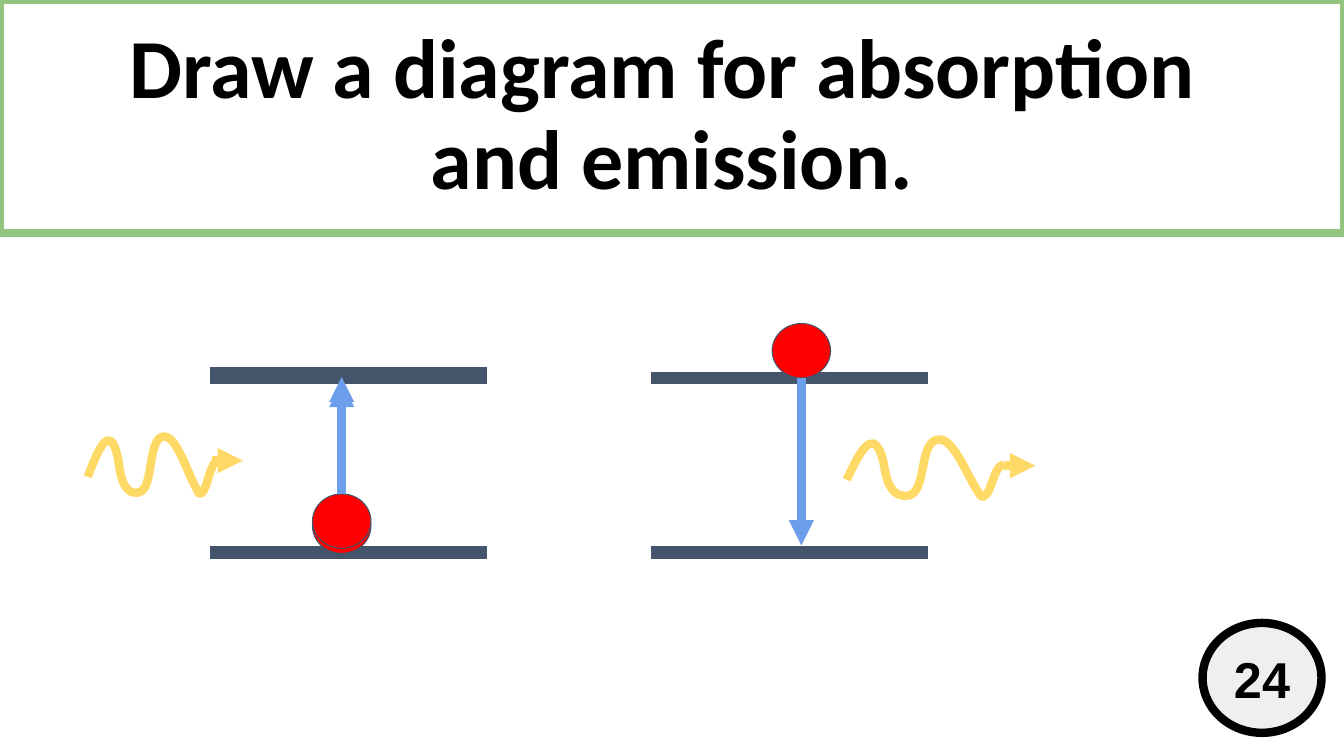
import pptx
import pptx.util
import pptx.dml.color
import pptx.enum.shapes
import pptx.enum.text
import pptx.oxml.ns
import lxml.etree

UNIT = pptx.util.Inches(0.1)
WIDE, HIGH = 133.33, 75
SHAPE = pptx.enum.shapes.MSO_SHAPE
SLATE, RED, BLUE, GOLD = "44546A", "FF0000", "6D9EEB", "FFD966"
TITLE = {"name": "Calibri", "size": pptx.util.Pt(60), "bold": True}
BADGE = {"name": "Arial", "size": pptx.util.Pt(36), "bold": True}
SPAN, RISE = 12.9, 5.7
START = (0, 4)
CURVES = [
    ((0.6, 2.5), (1.7, -0.6), (2.5, 0.7)),
    ((3.2, 1.8), (3, 3.8), (3.7, 4.9)),
    ((4.1, 5.6), (4.9, 5.8), (5.4, 5.4)),
    ((6.4, 4.5), (6.1, 1.1), (7.1, 0.2)),
    ((8.6, -1), (9.8, 3.6), (11, 5.6)),
    ((11.1, 5.8), (11.4, 5.6), (11.5, 5.4)),
    ((12, 4.5), (12.2, 2.5), (12.9, 2.5)),
]


def grid(*cells):
    return [round(cell * UNIT) for cell in cells]


def paint(part, color):
    part.solid()
    part.fore_color.rgb = pptx.dml.color.RGBColor.from_string(color)


def stroke(item, color, width):
    paint(item.line.fill, color)
    item.line.width = pptx.util.Pt(width)


def add_tag(home, name, **marks):
    return lxml.etree.SubElement(home, pptx.oxml.ns.qn(name), **marks)


def add_form(slide, kind, box, fill, color, width):
    form = slide.shapes.add_shape(kind, *grid(*box))
    form.shadow.inherit = False
    if fill:
        paint(form.fill, fill)
    else:
        form.fill.background()
    stroke(form, color, width)
    return form


def add_text(form, lines, style, inset, space):
    frame = form.text_frame
    frame.word_wrap = True
    frame.vertical_anchor = pptx.enum.text.MSO_ANCHOR.MIDDLE
    frame.margin_left = frame.margin_right = UNIT
    frame.margin_top = frame.margin_bottom = round(inset * UNIT)
    for place, line in enumerate(lines):
        para = frame.add_paragraph() if place else frame.paragraphs[0]
        para.alignment = pptx.enum.text.PP_ALIGN.CENTER
        para.line_spacing = space
        run = para.add_run()
        run.text = line
        for key, value in style.items():
            setattr(run.font, key, value)
        paint(run.font.fill, "000000")


def add_line(slide, ends, color, width, arrow=False):
    kind = pptx.enum.shapes.MSO_CONNECTOR.STRAIGHT
    line = slide.shapes.add_connector(kind, *grid(*ends))
    stroke(line, color, width)
    if arrow:
        add_tag(line.line._ln, "a:tailEnd", type="triangle")
    add_tag(line._element.spPr, "a:effectLst")


def add_bar(slide, left, top):
    add_line(slide, (left, top, left + 27.5, top), SLATE, 9)


def add_ball(slide, mid, top):
    add_form(slide, SHAPE.OVAL, (mid - 2.9, top, 5.8, 5.4), RED, SLATE, 0.75)


def bend(wave):
    route = next(wave._element.iter(pptx.oxml.ns.qn("a:path")))
    for child in list(route):
        route.remove(child)
    for key, size in zip("wh", grid(SPAN, RISE)):
        route.set(key, str(size))
    steps = [("a:moveTo", [START])]
    steps += [("a:cubicBezTo", curve) for curve in CURVES]
    for name, spots in steps:
        step = add_tag(route, name)
        for spot in spots:
            x, y = grid(*spot)
            add_tag(step, "a:pt", x=str(x), y=str(y))


def add_wave(slide, left, top, span):
    pen = slide.shapes.build_freeform(*grid(*START))
    pen.add_line_segments([grid(*curve[-1]) for curve in CURVES], close=False)
    wave = pen.convert_to_shape()
    bend(wave)
    wave.left, wave.top, wave.width, wave.height = grid(left, top, span, RISE)
    wave.shadow.inherit = False
    wave.fill.background()
    stroke(wave, GOLD, 6)


def absorb(slide):
    add_bar(slide, 20.8, 54.8)
    for lift in (0, 0.5):
        add_bar(slide, 20.8, 37.5 - lift)
        add_ball(slide, 33.9, 49.5 - lift)
        add_line(slide, (33.9, 49.5 - lift, 33.9, 37.9 - lift), BLUE, 6, True)
    add_wave(slide, 8.7, 43.3, SPAN)
    add_line(slide, (21, 45.7, 24.1, 45.7), GOLD, 6, True)


def emit(slide):
    for top in (54.8, 37.5):
        add_bar(slide, 64.6, top)
    add_ball(slide, 79.5, 32.1)
    add_line(slide, (79.5, 37.5, 79.5, 54.1), BLUE, 6, True)
    add_wave(slide, 84, 43.6, 15.6)
    add_line(slide, (99.6, 46.2, 102.7, 46.2), GOLD, 6, True)


def main():
    deck = pptx.Presentation()
    deck.slide_width, deck.slide_height = grid(WIDE, HIGH)
    slide = deck.slides.add_slide(deck.slide_layouts[6])
    head = add_form(slide, SHAPE.RECTANGLE, (0, 0, WIDE, 23.1), None, "93C47D", 6)
    add_text(head, ["Draw a diagram for absorption ", "and emission."], TITLE, 0.5, 0.9)
    badge = add_form(slide, SHAPE.OVAL, (119.3, 61.8, 11.8, 10.9), "EFEFEF", "000000", 6)
    add_text(badge, ["24"], BADGE, 1, 1.0)
    absorb(slide)
    emit(slide)
    deck.save("out.pptx")


if __name__ == "__main__":
    main()
